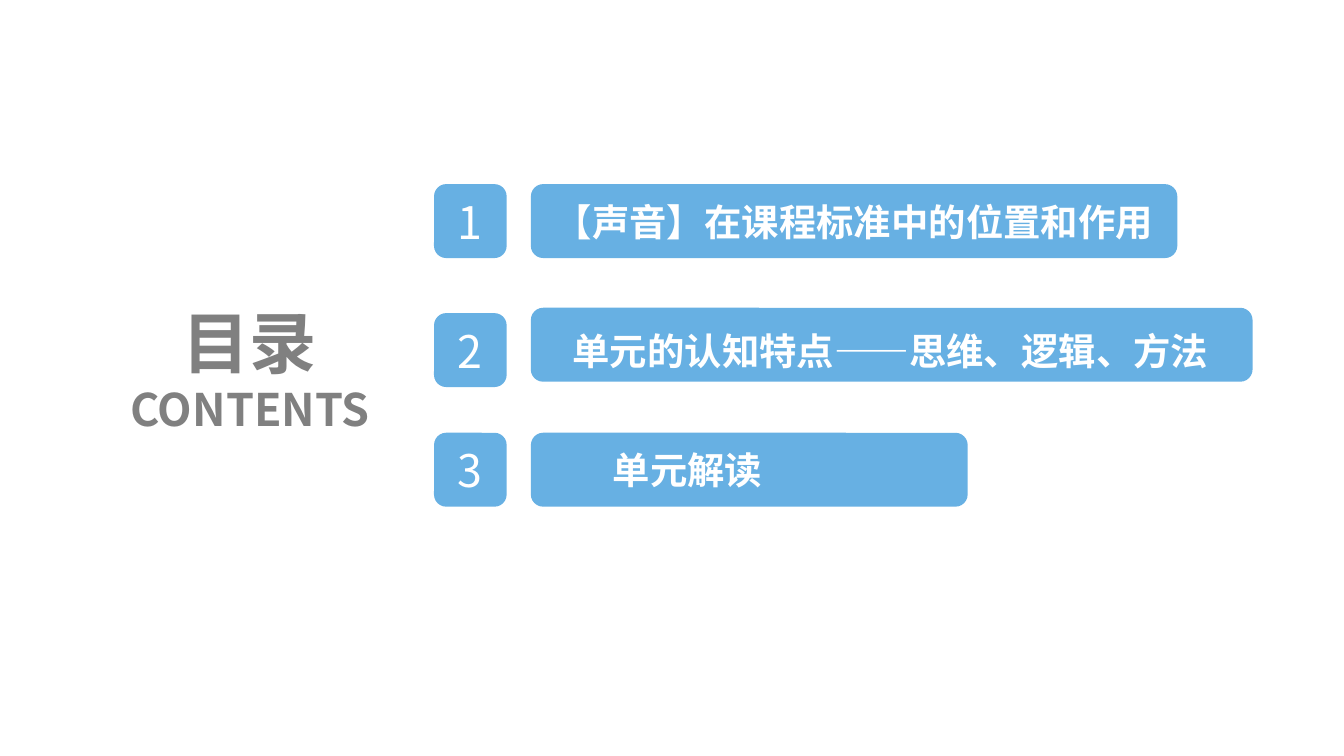
from lxml.etree import SubElement
from pptx import Presentation
from pptx.dml.color import RGBColor
from pptx.enum.shapes import MSO_SHAPE as Shape
from pptx.enum.text import MSO_ANCHOR as Anchor, PP_ALIGN as Align
from pptx.oxml.ns import qn
from pptx.util import Inches, Pt

FONT = "Noto Sans CJK SC"
BLUE, WHITE, GRAY = "67B0E3", "FFFFFF", "808080"

# Content: heading lines with their sizes
HEADING = [("目录", 36), ("CONTENTS", 24)]
# Entries: badge top, bar top, bar width, label box (None = centred in the bar)
ENTRIES = [
    ("【声音】在课程标准中的位置和作用", 1.37, 1.37, 4.81, None),
    ("单元的认知特点——思维、逻辑、方法", 2.33, 2.29, 5.37, (4.13, 2.37, 5.11, 0.47)),
    ("单元解读", 3.22, 3.22, 3.25, (4.43, 3.26, 2.38, 0.47)),
]
BADGE_LEFT, BADGE_WIDTH, BAR_LEFT, ROW_HEIGHT = 3.23, 0.54, 3.95, 0.55
BADGE_INSETS, LABEL_INSETS = (0.1, 0.05), (0.13, 0.07)


def rgb(hex_color):
    return RGBColor.from_string(hex_color)


def write(shape, lines, color, bold, align, anchor, insets):
    frame = shape.text_frame
    frame.word_wrap = True
    frame.vertical_anchor = anchor
    frame.margin_left = frame.margin_right = Inches(insets[0])
    frame.margin_top = frame.margin_bottom = Inches(insets[1])
    frame.text = "\n".join(text for text, _ in lines)
    for paragraph, (_, size) in zip(frame.paragraphs, lines):
        paragraph.alignment = align
        font = paragraph.font
        font.name, font.size, font.bold = FONT, Pt(size), bold
        font.color.rgb = rgb(color)
        # East Asian typeface
        SubElement(paragraph._p.pPr.find(qn("a:defRPr")), qn("a:ea"), typeface=FONT)


def add_block(left, top, width):
    block = slide.shapes.add_shape(
        Shape.ROUNDED_RECTANGLE, *map(Inches, (left, top, width, ROW_HEIGHT)))
    block.shadow.inherit = False
    block.fill.solid()
    block.fill.fore_color.rgb = rgb(BLUE)
    block.line.fill.background()
    return block


def add_text_box(box):
    return slide.shapes.add_textbox(*map(Inches, box))


# Widescreen 16:9 slide
prs = Presentation()
prs.slide_width, prs.slide_height = Inches(10), Inches(10 * 9 / 16)
slide = prs.slides.add_slide(prs.slide_layouts[6])

# Numbered entries
for number, (label, badge_top, bar_top, bar_width, label_box) in enumerate(ENTRIES, 1):
    badge = add_block(BADGE_LEFT, badge_top, BADGE_WIDTH)
    write(badge, [(str(number), 24)], WHITE, False, Align.CENTER, Anchor.MIDDLE, BADGE_INSETS)
    bar = add_block(BAR_LEFT, bar_top, bar_width)
    if label_box:
        write(add_text_box(label_box), [(label, 20)], WHITE, True,
              Align.LEFT, Anchor.TOP, LABEL_INSETS)
    else:
        write(bar, [(label, 20)], WHITE, True, Align.CENTER, Anchor.MIDDLE, LABEL_INSETS)

# Heading
heading = add_text_box((0.68, 2.19, 2.36, 1.11))
write(heading, HEADING, GRAY, True, Align.CENTER, Anchor.TOP, BADGE_INSETS)

prs.save("out.pptx")
